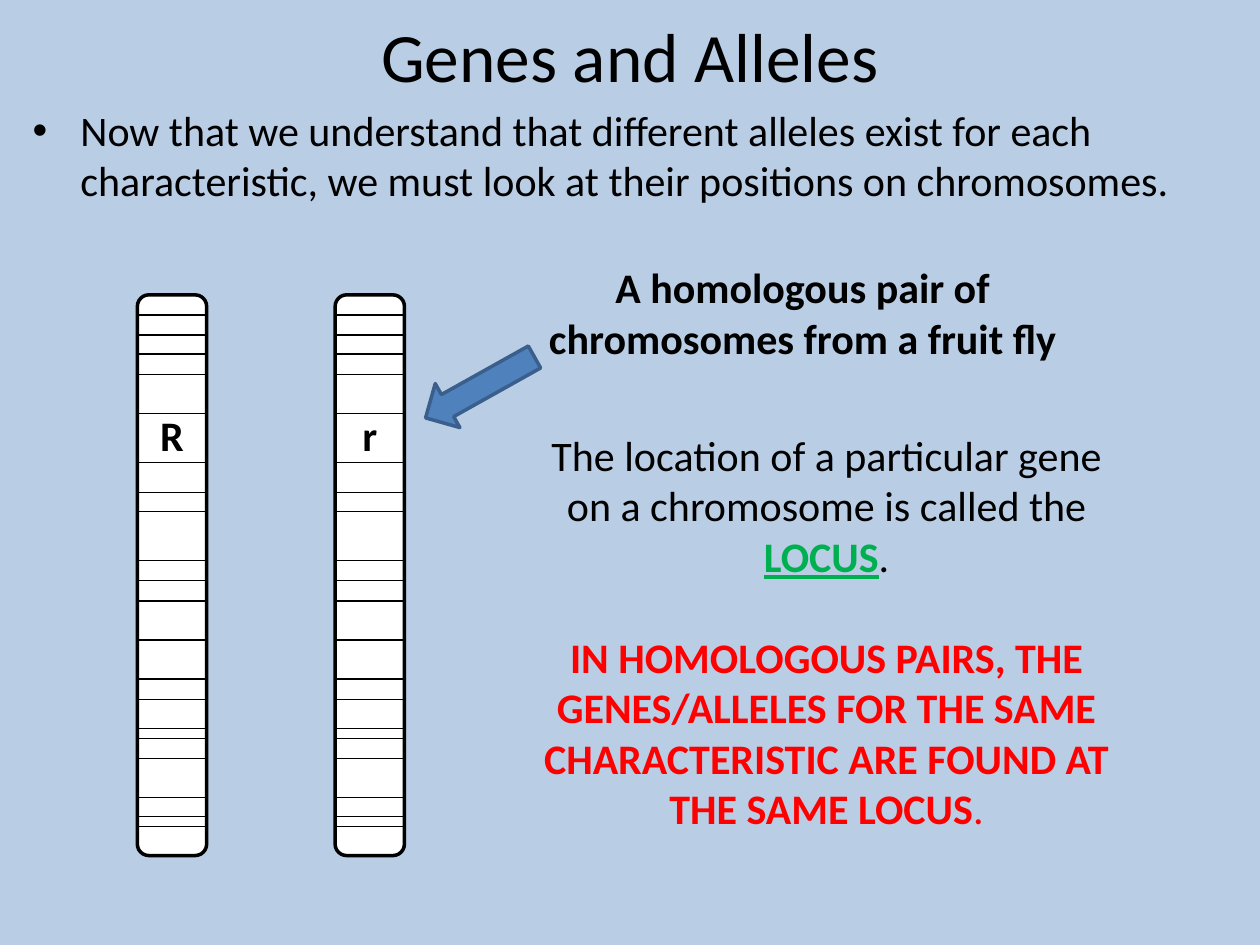
from dataclasses import dataclass
from typing import Any

from lxml import etree
from pptx import Presentation
from pptx.dml.color import RGBColor
from pptx.enum.shapes import MSO_CONNECTOR, MSO_SHAPE
from pptx.enum.text import MSO_ANCHOR, MSO_AUTO_SIZE, PP_ALIGN
from pptx.oxml.ns import qn
from pptx.util import Inches, Pt

STRAIGHT = MSO_CONNECTOR.STRAIGHT
ROUNDED = MSO_SHAPE.ROUNDED_RECTANGLE
DOWN_ARROW = MSO_SHAPE.DOWN_ARROW
TOP, MIDDLE = MSO_ANCHOR.TOP, MSO_ANCHOR.MIDDLE
FIXED, GROW = MSO_AUTO_SIZE.NONE, MSO_AUTO_SIZE.SHAPE_TO_FIT_TEXT
LEFT, CENTER = PP_ALIGN.LEFT, PP_ALIGN.CENTER

BLACK, WHITE, RED, GREEN = "000000", "FFFFFF", "FF0000", "00B050"

CHROMOSOMES = [(1.09, "R"), (2.66, "r")]
CHROMOSOME_TOP, CHROMOSOME_WIDTH, CHROMOSOME_HEIGHT = 2.34, 0.55, 4.45
BANDS = [2.5, 2.66, 2.81, 2.97, 3.28, 3.67, 3.91, 4.06, 4.45, 4.61,
         4.77, 5.08, 5.39, 5.55, 5.78, 5.86, 6.02, 6.33, 6.48, 6.56]


def rgb(color):
    return RGBColor.from_string(color)


@dataclass
class SlideBuilder:
    slide: Any
    font: str = "Calibri"
    size: float = 24

    def background(self, color):
        fill = self.slide.background.fill
        fill.solid()
        fill.fore_color.rgb = rgb(color)

    def shape(self, kind, box, fill, line, rotation=0):
        shape = self.slide.shapes.add_shape(kind, *map(Inches, box))
        shape.shadow.inherit = False
        shape.fill.solid()
        shape.fill.fore_color.rgb = rgb(fill)
        shape.line.color.rgb = rgb(line)
        shape.line.width = Pt(2)
        shape.rotation = rotation

    def band(self, left, right, y):
        band = self.slide.shapes.add_connector(
            STRAIGHT, *map(Inches, (left, y, right, y)))
        band.line.color.rgb = rgb(BLACK)
        band.line.width = Pt(0.75)
        etree.SubElement(band.element.spPr, qn("a:effectLst"))

    def text(self, box, paragraphs, size=None, align=CENTER, anchor=TOP,
             fit=GROW, gap=0):
        frame = self.slide.shapes.add_textbox(*map(Inches, box)).text_frame
        frame.word_wrap = True
        frame.auto_size = fit
        frame.vertical_anchor = anchor
        for index, pieces in enumerate(paragraphs):
            paragraph = frame.paragraphs[0] if index == 0 else frame.add_paragraph()
            paragraph.alignment = align
            if index:
                paragraph.space_before = Pt(gap)
            for wording, color, bold, underline in pieces:
                run = paragraph.add_run()
                run.text = wording
                run.font.name = self.font
                run.font.size = Pt(size or self.size)
                run.font.color.rgb = rgb(color)
                run.font.bold = bold
                run.font.underline = underline
        return frame

    def bullet(self, box, wording):
        frame = self.text(box, [[(wording, BLACK, False, False)]],
                          align=LEFT, fit=FIXED)
        paragraph = frame.paragraphs[0]
        paragraph.space_before = Pt(0.2 * self.size)
        properties = paragraph._p.get_or_add_pPr()
        properties.set("marL", str(Inches(0.38)))
        properties.set("indent", str(Inches(-0.38)))
        etree.SubElement(properties, qn("a:buFont"), typeface="Arial")
        etree.SubElement(properties, qn("a:buChar"), char="•")

    def chromosome(self, left):
        self.shape(ROUNDED, (left, CHROMOSOME_TOP, CHROMOSOME_WIDTH,
                             CHROMOSOME_HEIGHT), WHITE, BLACK)
        for y in BANDS:
            self.band(left, left + CHROMOSOME_WIDTH, y)


def main():
    deck = Presentation()
    deck.slide_width, deck.slide_height = Inches(10), Inches(7.5)
    builder = SlideBuilder(deck.slides.add_slide(deck.slide_layouts[6]))
    builder.background("B9CDE5")

    builder.text((0.5, 0.16, 9, 0.55),
                 [[("Genes and Alleles", BLACK, False, False)]],
                 size=39.6, anchor=MIDDLE, fit=FIXED)
    builder.bullet((0.16, 0.78, 9.69, 6.48),
                   "Now that we understand that different alleles exist for each "
                   "characteristic, we must look at their positions on chromosomes.")

    for left, allele in CHROMOSOMES:
        builder.chromosome(left)
        builder.text((left, 3.2, CHROMOSOME_WIDTH, 0.5),
                     [[(allele, BLACK, True, False)]])

    builder.text((4.22, 2.03, 4.3, 0.91),
                 [[("A homologous pair of chromosomes from a fruit fly",
                    BLACK, True, False)]])
    builder.shape(DOWN_ARROW, (3.61, 2.58, 0.4, 0.99), "4F81BD", "3A5F8C", 60.8)

    locus = [("The location of a particular gene on a chromosome is called the ",
              BLACK, False, False),
             ("LOCUS", GREEN, True, True),
             (".", BLACK, False, False)]
    same_locus = [("IN HOMOLOGOUS PAIRS, THE GENES/ALLELES FOR THE SAME "
                   "CHARACTERISTIC ARE FOUND AT THE SAME LOCUS", RED, True, False),
                  (".", RED, False, False)]
    builder.text((4.14, 3.36, 4.84, 3.33), [locus, same_locus], gap=29)

    deck.save("out.pptx")


if __name__ == "__main__":
    main()
